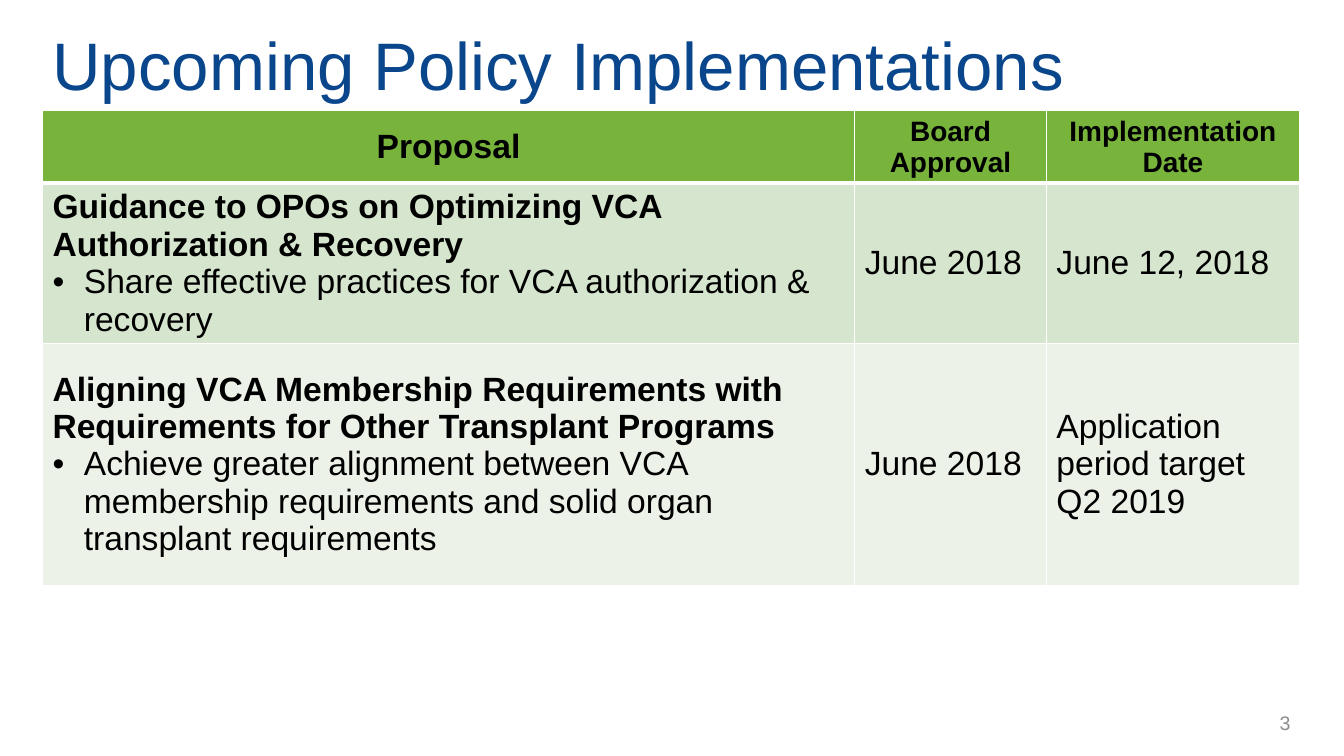
from lxml.etree import SubElement
from pptx import Presentation
from pptx.dml.color import RGBColor
from pptx.enum.text import MSO_ANCHOR, PP_ALIGN
from pptx.oxml.ns import qn
from pptx.util import Cm, Pt

NAVY = RGBColor(0x0A, 0x46, 0x8C)
BLACK = RGBColor(0, 0, 0)
GREY = RGBColor(0x8C, 0x8C, 0x8C)
GREEN = RGBColor(0x78, 0xB4, 0x3C)
SAGE = RGBColor(0xD6, 0xE5, 0xCE)
MIST = RGBColor(0xEC, 0xF2, 0xE8)
WHITE = RGBColor(0xFF, 0xFF, 0xFF)

WIDTHS = (20.47, 4.83, 6.38)
HEIGHTS = (1.78, 2.64, 6.1)
HEADS = (("Proposal", 24), ("Board Approval", 20), ("Implementation Date", 20))
POLICIES = (
    ("Guidance to OPOs on Optimizing VCA Authorization & Recovery",
     "Share effective practices for VCA authorization & recovery",
     "June 2018", "June 12, 2018"),
    ("Aligning VCA Membership Requirements with Requirements for Other Transplant Programs",
     "Achieve greater alignment between VCA membership requirements and solid organ "
     "transplant requirements",
     "June 2018", "Application period target Q2 2019"),
)


def write(para, text, size=24, color=BLACK, bold=False, align=PP_ALIGN.LEFT, bullet=False):
    """Fill a paragraph with formatted text."""
    if bullet:
        props = para._p.get_or_add_pPr()
        props.set("marL", str(Cm(0.79)))
        props.set("indent", str(-Cm(0.79)))
        SubElement(props, qn("a:buFont"), typeface="Arial")
        SubElement(props, qn("a:buChar"), char="•")
    para.alignment = align
    run = para.add_run()
    run.text = text
    font = run.font
    font.name, font.size, font.bold = "Arial", Pt(size), bold
    font.color.rgb = color


def add_label(slide, text, left, top, width, height, **style):
    """Add a text box centred vertically."""
    box = slide.shapes.add_textbox(Cm(left), Cm(top), Cm(width), Cm(height))
    frame = box.text_frame
    frame.word_wrap = True
    frame.vertical_anchor = MSO_ANCHOR.MIDDLE
    write(frame.paragraphs[0], text, **style)


def style_cell(cell, fill, base=1):
    """Set the borders, fill and anchor of a cell."""
    props = cell._tc.get_or_add_tcPr()
    for side, width in (("L", 1), ("R", 1), ("T", 1), ("B", base)):
        line = SubElement(props, qn(f"a:ln{side}"), w=str(Pt(width)))
        paint = SubElement(line, qn("a:solidFill"))
        SubElement(paint, qn("a:srgbClr"), val=str(WHITE))
    cell.fill.solid()
    cell.fill.fore_color.rgb = fill
    cell.vertical_anchor = MSO_ANCHOR.MIDDLE


def add_grid(slide):
    """Add the table of policies."""
    frame = slide.shapes.add_table(len(HEIGHTS), len(WIDTHS), Cm(1.07), Cm(2.79),
                                   Cm(sum(WIDTHS)), Cm(sum(HEIGHTS)))
    table = frame.table
    for column, width in zip(table.columns, WIDTHS):
        column.width = Cm(width)
    for row, height in zip(table.rows, HEIGHTS):
        row.height = Cm(height)
    for col, (head, size) in enumerate(HEADS):
        cell = table.cell(0, col)
        style_cell(cell, GREEN, base=3)
        write(cell.text_frame.paragraphs[0], head, size=size, bold=True,
              align=PP_ALIGN.CENTER)
    for row, (fill, policy) in enumerate(zip((SAGE, MIST), POLICIES), 1):
        name, goal, *dates = policy
        for col, text in enumerate((name, *dates)):
            cell = table.cell(row, col)
            style_cell(cell, fill)
            write(cell.text_frame.paragraphs[0], text, bold=col == 0)
        write(table.cell(row, 0).text_frame.add_paragraph(), goal, bullet=True)


def main():
    """Build and save the slide."""
    deck = Presentation()
    deck.slide_width, deck.slide_height = Cm(33.87), Cm(19.05)
    slide = deck.slides.add_slide(deck.slide_layouts[6])
    add_grid(slide)
    add_label(slide, "Upcoming Policy Implementations", 1.07, 0.43, 32.39, 2.36,
              size=48, color=NAVY)
    add_label(slide, "3", 27.03, 17.7, 5.74, 1.02, size=14, color=GREY,
              align=PP_ALIGN.RIGHT)
    deck.save("out.pptx")


if __name__ == "__main__":
    main()
